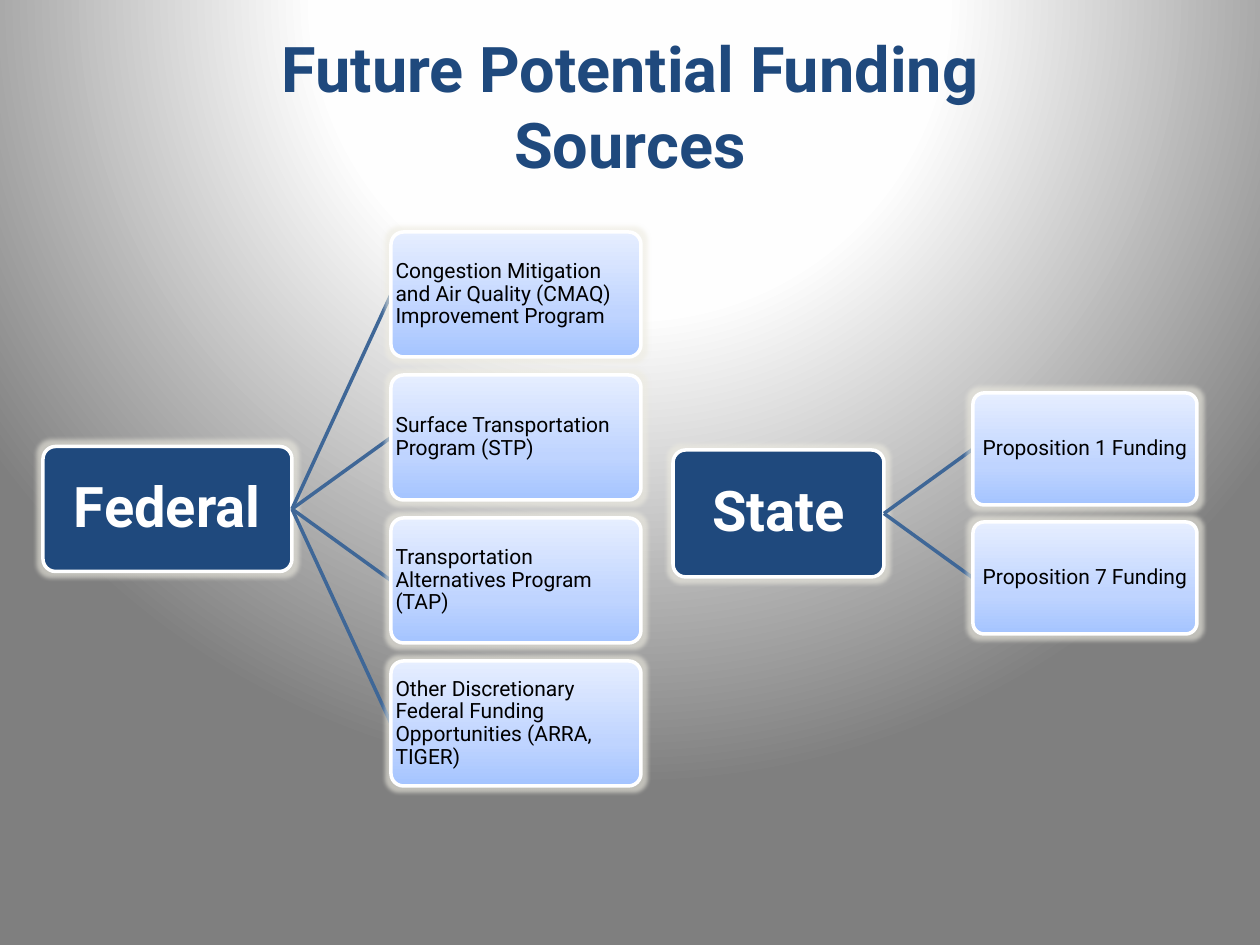
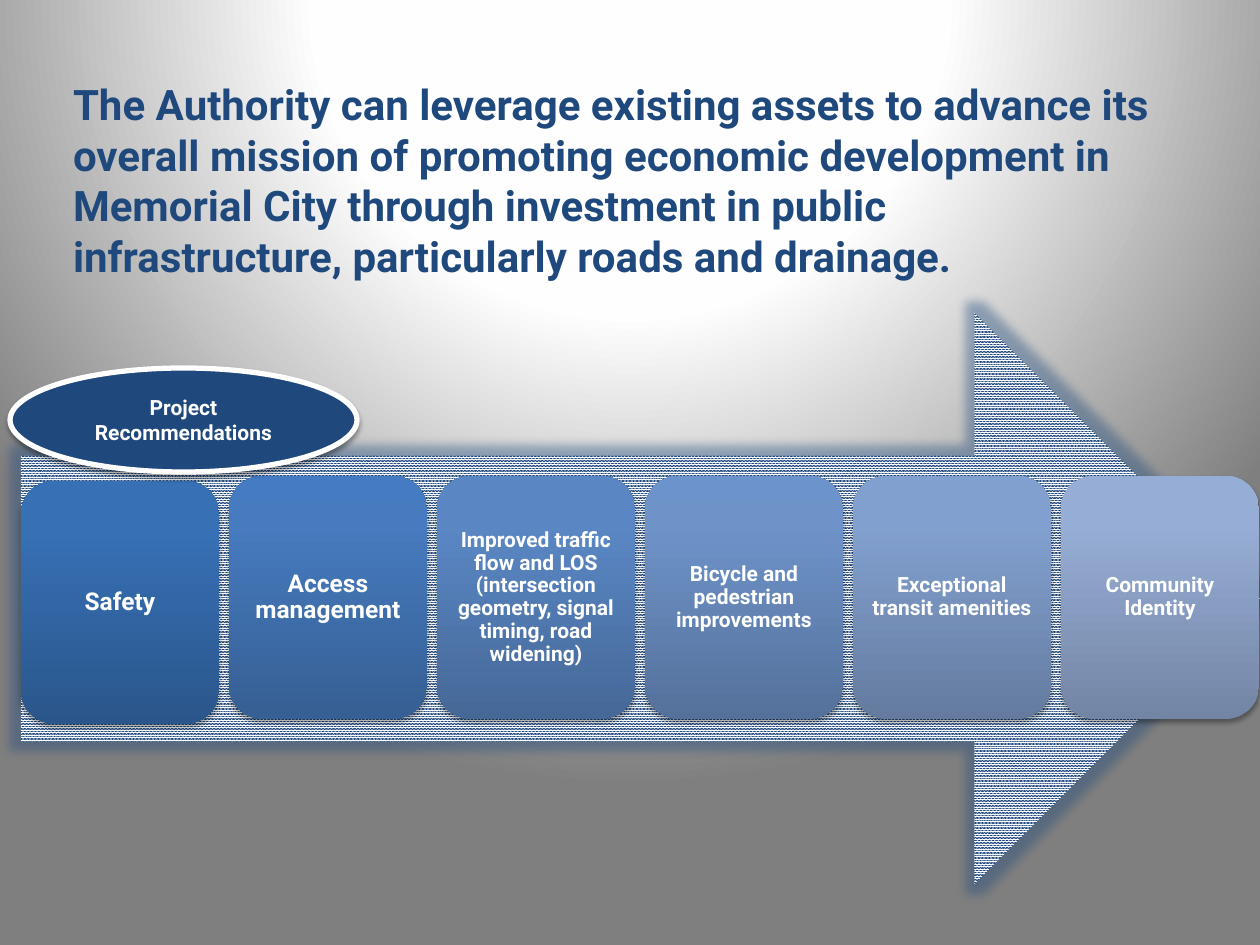
from dataclasses import dataclass

from pptx import Presentation
from pptx.dml.color import RGBColor
from pptx.enum.dml import MSO_PATTERN
from pptx.enum.shapes import MSO_CONNECTOR, MSO_SHAPE
from pptx.enum.text import MSO_ANCHOR, PP_ALIGN
from pptx.oxml import parse_xml
from pptx.oxml.ns import nsdecls, qn
from pptx.util import Pt

ROUND, OVAL, ARROW = MSO_SHAPE.ROUNDED_RECTANGLE, MSO_SHAPE.OVAL, MSO_SHAPE.RIGHT_ARROW
LINE, DOTS = MSO_CONNECTOR.STRAIGHT, MSO_PATTERN.PERCENT_90
LEFT, MID = PP_ALIGN.LEFT, PP_ALIGN.CENTER
TOP, MIDDLE = MSO_ANCHOR.TOP, MSO_ANCHOR.MIDDLE
SCALE = 914400 / 126
WIDE, HIGH = 1260, 945


@dataclass(frozen=True)
class Theme:
    font: str = "Roboto"
    navy: str = "1F497D"
    white: str = "FFFFFF"
    black: str = "000000"
    link: str = "3F6797"
    halo: str = "EEECE1"
    back: tuple = ((0, "FFFFFF"), (40, "FEFEFE"), (100, "7F7F7F"))
    pale: tuple = ((0, "A4C4FF"), (35, "BFD4FF"), (100, "E6EEFF"))
    title: int = 36
    root: int = 32
    lead: int = 24
    card: int = 14
    small: int = 12


T = Theme()
CARDS = [
    ("Safety", T.card, 5, ("2A568B", "3770B5", "3570B8")),
    ("Access management", T.card, 0, ("365F93", "467BBF", "447BC3")),
    ("Improved traffic flow and LOS (intersection geometry, signal timing, road widening)",
     T.small, 0, ("456897", "5A87C4", "5887C7")),
    ("Bicycle and pedestrian improvements", T.small, 0, ("55719B", "6E93C9", "6D93CC")),
    ("Exceptional transit amenities", T.small, 0, ("647B9F", "82A0CF", "81A0D1")),
    ("Community Identity", T.small, 0, ("7385A4", "96ADD5", "95ADD7")),
]
FEDERAL = [
    "Congestion Mitigation and Air Quality (CMAQ) Improvement Program",
    "Surface Transportation Program (STP)",
    "Transportation Alternatives Program (TAP)",
    "Other Discretionary Federal Funding Opportunities (ARRA, TIGER)",
]
STATE = ["Proposition 1 Funding", "Proposition 7 Funding"]


def px(*nums):
    return [round(n * SCALE) for n in nums]


def rgb(tone):
    return RGBColor.from_string(tone)


def grad(stops, path):
    marks = "".join(f'<a:gs pos="{pos * 1000}"><a:srgbClr val="{tone}"/></a:gs>'
                    for pos, tone in stops)
    return parse_xml(f'<a:gradFill {nsdecls("a")} rotWithShape="1">'
                     f'<a:gsLst>{marks}</a:gsLst>{path}</a:gradFill>')


def effect(shape, tag, tone, alpha):
    fx = shape._element.spPr.find(qn("a:effectLst"))
    fx.append(parse_xml(f'<a:{tag} {nsdecls("a")}><a:srgbClr val="{tone}">'
                        f'<a:alpha val="{alpha * 1000}"/></a:srgbClr></a:{tag.split()[0]}>'))


def glow(shape, tone, size, alpha):
    effect(shape, f'glow rad="{Pt(size)}"', tone, alpha)


def shade(shape, alpha):
    effect(shape, f'outerShdw blurRad="{Pt(3)}" dist="{Pt(2)}" dir="5400000" rotWithShape="0"',
           T.black, alpha)


def write(shape, text, size, tone, bold=True, align=MID, pad=(13, 6), space=1.0, anchor=MIDDLE):
    frame = shape.text_frame
    frame.word_wrap = True
    frame.vertical_anchor = anchor
    frame.margin_left = frame.margin_right = px(pad[0])[0]
    frame.margin_top = frame.margin_bottom = px(pad[1])[0]
    para = frame.paragraphs[0]
    para.text = text
    para.alignment = align
    para.line_spacing = space
    para.font.name = T.font
    para.font.size = Pt(size)
    para.font.bold = bold
    para.font.color.rgb = rgb(tone)


def block(slide, kind, box, fill, edge=0):
    shape = slide.shapes.add_shape(kind, *px(*box))
    shape.shadow.inherit = False
    shape.fill.solid()
    if isinstance(fill, str):
        shape.fill.fore_color.rgb = rgb(fill)
    else:
        props = shape._element.spPr
        props.replace(props.find(qn("a:solidFill")),
                      grad(fill, '<a:lin ang="16200000" scaled="0"/>'))
    if edge:
        shape.line.color.rgb = rgb(T.white)
        shape.line.width = Pt(edge)
    else:
        shape.line.fill.background()
    return shape


def page(deck):
    slide = deck.slides.add_slide(deck.slide_layouts[6])
    slide.background.fill.solid()
    props = slide._element.cSld.find(qn("p:bg")).find(qn("p:bgPr"))
    path = ('<a:path path="circle"><a:fillToRect l="50000" t="-80000" '
            'r="50000" b="180000"/></a:path>')
    props.replace(props.find(qn("a:solidFill")), grad(T.back, path))
    return slide


def head(slide, box, text, size, align):
    area = slide.shapes.add_textbox(*px(*box))
    write(area, text, size, T.navy, align=align, anchor=TOP)


def node(slide, box, fill):
    shape = block(slide, ROUND, box, fill, 2)
    shape.adjustments[0] = 0.1
    glow(shape, T.halo, 5, 60)
    return shape


def link(slide, start, end):
    line = slide.shapes.add_connector(LINE, *px(*start, *end))
    line.line.color.rgb = rgb(T.link)
    line.line.width = Pt(2)
    line._element.spPr.append(parse_xml(f'<a:effectLst {nsdecls("a")}/>'))


def tree(slide, box, name, items, root, leaf, align):
    left, top, wide, high = box
    mid = top + high / 2
    step = (high - leaf[1]) / (len(items) - 1)
    edge = left + wide - leaf[0]
    shape = node(slide, (left, mid - root[1] / 2, *root), T.navy)
    write(shape, name, T.root, T.white, pad=(3, 3), space=0.9)
    for i, item in enumerate(items):
        high_at = top + i * step
        link(slide, (left + root[0], mid), (edge, high_at + leaf[1] / 2))
        shape = node(slide, (edge, high_at, *leaf), T.pale)
        write(shape, item, T.small, T.black, False, align, (1, 1), 0.9)


def arrow(slide, box):
    shape = block(slide, ARROW, box, T.white)
    shape.fill.patterned()
    shape.fill.pattern = DOTS
    shape.fill.fore_color.rgb = rgb(T.white)
    shape.fill.back_color.rgb = rgb(T.navy)
    glow(shape, T.navy, 11, 40)


def cards(slide, box, gap):
    left, top, wide, high = box
    size = (wide - gap * (len(CARDS) - 1)) / len(CARDS)
    for i, (text, font, drop, tones) in enumerate(CARDS):
        place = (left + i * (size + gap), top + drop, size, high)
        shape = block(slide, ROUND, place, tuple(zip((0, 80, 100), tones)))
        shade(shape, 35)
        write(shape, text, font, T.white, pad=(7, 7), space=0.9)


def badge(slide, box, text):
    shape = block(slide, OVAL, box, T.navy, 3)
    shade(shape, 38)
    write(shape, text, T.small, T.white)


def funds(deck):
    slide = page(deck)
    head(slide, (231, 24, 798, 165), "Future Potential Funding Sources", T.title, MID)
    tree(slide, (43, 232, 598, 554), "Federal", FEDERAL, (249, 125), (250, 125), LEFT)
    tree(slide, (673, 393, 524, 241), "State", STATE, (211, 127), (224, 112), MID)


def goals(deck):
    slide = page(deck)
    head(slide, (60, 73, 1103, 217),
         "The Authority can leverage existing assets to advance its overall mission of "
         "promoting economic development in Memorial City through investment in public "
         "infrastructure, particularly roads and drainage.", T.lead, LEFT)
    arrow(slide, (21, 313, 1239, 571))
    cards(slide, (21, 476, 1238, 243), 10)
    badge(slide, (10, 368, 347, 104), "Project Recommendations")


def main():
    deck = Presentation()
    deck.slide_width, deck.slide_height = px(WIDE, HIGH)
    funds(deck)
    goals(deck)
    deck.save("out.pptx")


if __name__ == "__main__":
    main()
